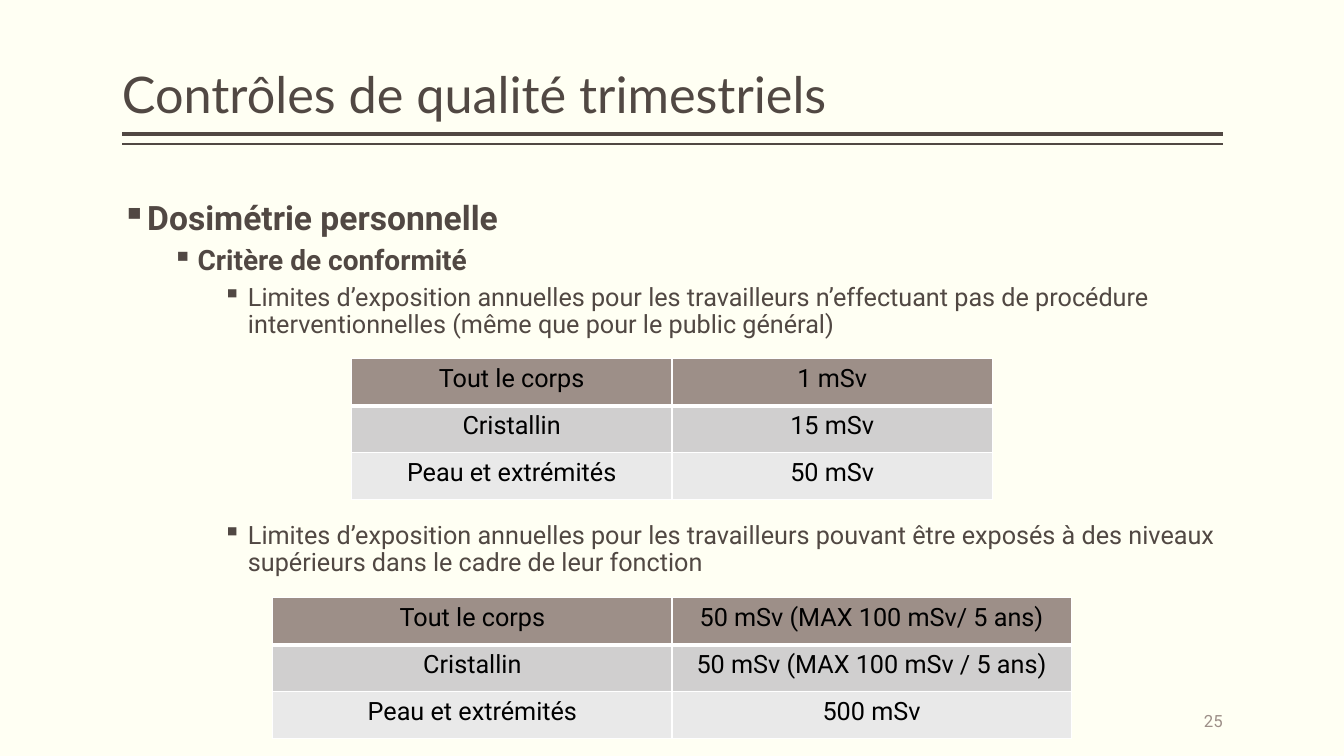
from dataclasses import dataclass
from lxml.etree import SubElement
from pptx import Presentation
from pptx.dml.color import RGBColor
from pptx.enum.shapes import MSO_CONNECTOR
from pptx.enum.text import MSO_ANCHOR, PP_ALIGN
from pptx.oxml.ns import qn
from pptx.util import Emu, Inches, Pt


@dataclass(frozen=True)
class Theme:
    paper: str = "FFFFF3"
    ink: str = "514843"
    muted: str = "9D8F88"
    black: str = "000000"
    edge: str = "FFFFFF"
    rows: tuple = ("9D8F88", "D0CFCF", "E9E9E9")
    head: str = "Lato"
    body: str = "Roboto"
    title: int = 36
    levels: tuple = (24, 20, 18)
    cell: int = 18
    note: int = 12


THEME = Theme()
WIDE, HIGH = Inches(13.333), Inches(7.5)
LEFT, SPAN = 9.08, 81.9  # content column, in percent of the slide width
ROW = 6.22  # table row, in percent of the slide height

# Level, text, space before in points; the last one clears the first table
POINTS = (
    (0, "Dosimétrie personnelle", 18),
    (1, "Critère de conformité", 6),
    (2, "Limites d’exposition annuelles pour les travailleurs n’effectuant pas "
        "de procédure interventionnelles (même que pour le public général)", 6),
    (2, "Limites d’exposition annuelles pour les travailleurs pouvant être "
        "exposés à des niveaux supérieurs dans le cadre de leur fonction", 131),
)
ORGANS = ("Tout le corps", "Cristallin", "Peau et extrémités")
# Top, width, dose limits
LIMITS = (
    (47.47, 47.7, ("1 mSv", "15 mSv", "50 mSv")),
    (79.07, 59.4, ("50 mSv (MAX 100 mSv/ 5 ans)",
                   "50 mSv (MAX 100 mSv / 5 ans)", "500 mSv")),
)


def across(share):
    return Emu(round(WIDE * share / 100))


def down(share):
    return Emu(round(HIGH * share / 100))


def assign(item, values):
    for name, value in values.items():
        setattr(item, name, value)


def write(para, text, size, color, font=THEME.body, bold=False, **style):
    assign(para, style)
    run = para.add_run()
    run.text = text
    assign(run.font, {"name": font, "size": Pt(size), "bold": bold})
    run.font.color.rgb = RGBColor.from_string(color)


def add_box(slide, left, top, width, height, anchor=MSO_ANCHOR.TOP):
    box = slide.shapes.add_textbox(
        across(left), down(top), across(width), down(height))
    assign(box.text_frame, {
        "word_wrap": True, "vertical_anchor": anchor,
        "margin_left": 0, "margin_right": 0,
        "margin_top": Inches(0.05), "margin_bottom": Inches(0.05)})
    return box.text_frame


def add_rule(slide, top, weight):
    rule = slide.shapes.add_connector(
        MSO_CONNECTOR.STRAIGHT, across(LEFT), down(top),
        across(LEFT + SPAN), down(top))
    rule.line.width = Pt(weight)
    rule.line.color.rgb = RGBColor.from_string(THEME.ink)
    SubElement(rule._element.spPr, qn("a:effectLst"))


def add_bullet(para, level):
    props = para._p.get_or_add_pPr()
    props.set("marL", str(Inches(0.25 + 0.5 * level)))
    props.set("indent", str(Inches(-0.25)))
    SubElement(props, qn("a:buChar"), char="▪")


def add_list(frame):
    for index, (level, text, gap) in enumerate(POINTS):
        para = frame.add_paragraph() if index else frame.paragraphs[0]
        write(para, text, THEME.levels[level], THEME.ink, bold=level < 2,
              level=level, line_spacing=0.9, space_before=Pt(gap))
        add_bullet(para, level)


def add_edge(cell, side, weight):
    line = SubElement(cell._tc.get_or_add_tcPr(), qn(f"a:ln{side}"),
                      w=str(Pt(weight)))
    fill = SubElement(line, qn("a:solidFill"))
    SubElement(fill, qn("a:srgbClr"), val=THEME.edge)


def add_grid(slide, top, width, doses):
    count = len(doses)
    table = slide.shapes.add_table(
        count, 2, across((100 - width) / 2), down(top),
        across(width), down(ROW * count)).table
    for r, (pair, color) in enumerate(zip(zip(ORGANS, doses), THEME.rows)):
        for c, text in enumerate(pair):
            cell = table.cell(r, c)
            write(cell.text_frame.paragraphs[0], text, THEME.cell,
                  THEME.black, alignment=PP_ALIGN.CENTER)
            # The line below the header row is heavier
            weights = {"L": 1, "R": 1, "T": 3 if r == 1 else 1,
                       "B": 3 if r == 0 else 1}
            for side, weight in weights.items():
                add_edge(cell, side, weight)
            cell.fill.solid()
            cell.fill.fore_color.rgb = RGBColor.from_string(color)


def main():
    deck = Presentation()
    assign(deck, {"slide_width": WIDE, "slide_height": HIGH})
    slide = deck.slides.add_slide(deck.slide_layouts[6])
    slide.background.fill.solid()
    slide.background.fill.fore_color.rgb = RGBColor.from_string(THEME.paper)

    # Double rule under the title
    for top, weight in ((17.73, 3), (19.07, 1)):
        add_rule(slide, top, weight)

    # Bullets
    add_list(add_box(slide, LEFT, 26, SPAN, 66.67))

    # Slide number
    note = add_box(slide, LEFT + SPAN - 15, 92.67, 15, 5.33, MSO_ANCHOR.MIDDLE)
    write(note.paragraphs[0], "25", THEME.note, THEME.muted,
          alignment=PP_ALIGN.RIGHT)

    # Title
    title = add_box(slide, LEFT, 1.07, SPAN, 16, MSO_ANCHOR.BOTTOM)
    write(title.paragraphs[0], "Contrôles de qualité trimestriels",
          THEME.title, THEME.ink, THEME.head, line_spacing=0.9)

    # Dose limit tables
    for top, width, doses in LIMITS:
        add_grid(slide, top, width, doses)

    deck.save("out.pptx")


if __name__ == "__main__":
    main()
